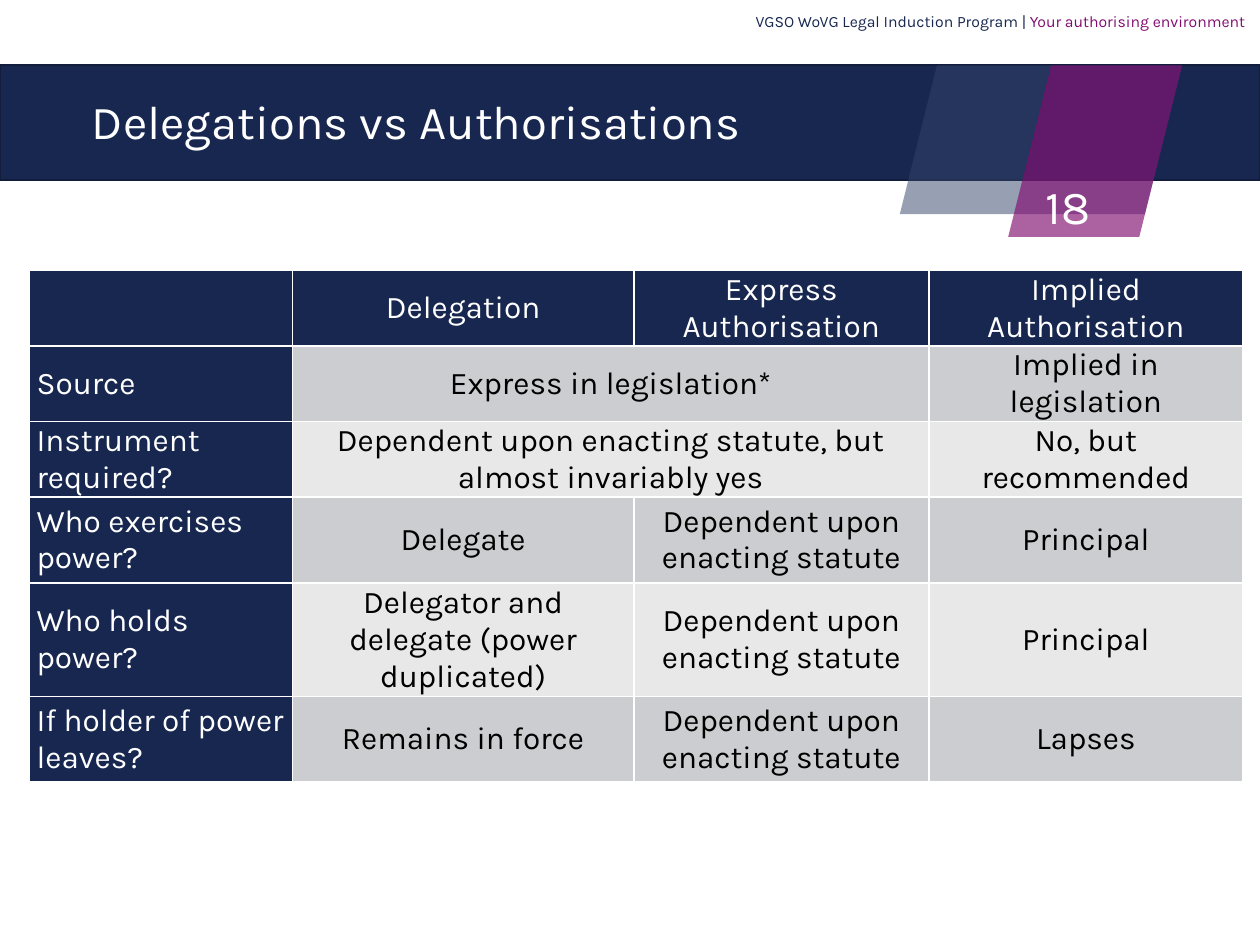
import pptx
import pptx.dml.color
import pptx.enum.shapes
import pptx.enum.text
import pptx.oxml
import pptx.oxml.ns
import pptx.util

Pt = pptx.util.Pt
RGBColor = pptx.dml.color.RGBColor
Align = pptx.enum.text.PP_ALIGN
Anchor = pptx.enum.text.MSO_ANCHOR
Shape = pptx.enum.shapes.MSO_SHAPE

NAVY = RGBColor(0x17, 0x27, 0x50)
DARK_NAVY = RGBColor(0x11, 0x1D, 0x3B)
SLATE = RGBColor(0x34, 0x43, 0x6A)
PURPLE = RGBColor(0x81, 0x0D, 0x70)
WHITE = RGBColor(0xFF, 0xFF, 0xFF)
BLACK = RGBColor(0, 0, 0)
BANDS = (RGBColor(0xCC, 0xCD, 0xD0), RGBColor(0xE8, 0xE8, 0xE9))
FONT = "Karla"

COLUMN_WIDTHS = (150.5, 195.1, 168.6, 179.5)
ROW_HEIGHTS = (32.4, 40.3, 40.3, 49, 49, 49)
# None continues the cell to its left
ROWS = (
    ("", "Delegation", "Express Authorisation", "Implied Authorisation"),
    ("Source", "Express in legislation*", None, "Implied in legislation"),
    ("Instrument required?",
     "Dependent upon enacting statute, but almost invariably yes", None,
     "No, but recommended"),
    ("Who exercises power?", "Delegate", "Dependent upon enacting statute", "Principal"),
    ("Who holds power?", "Delegator and delegate (power duplicated)",
     "Dependent upon enacting statute", "Principal"),
    ("If holder of power leaves?", "Remains in force",
     "Dependent upon enacting statute", "Lapses"),
)


def write_text(paragraph, text, size=18, color=WHITE, align=Align.LEFT,
               line_spacing=None, space_after=None):
    paragraph.alignment = align
    paragraph.line_spacing = line_spacing
    if space_after is not None:
        paragraph.space_after = Pt(space_after)
    run = paragraph.add_run()
    run.text = text
    run.font.name = FONT
    run.font.size = Pt(size)
    run.font.color.rgb = color


def add_text_box(slide, box, insets, anchor):
    """Add an empty wrapping text box and return its first paragraph."""
    frame = slide.shapes.add_textbox(*map(Pt, box)).text_frame
    frame.word_wrap = True
    frame.vertical_anchor = anchor
    frame.margin_left = frame.margin_right = Pt(insets[0])
    frame.margin_top = frame.margin_bottom = Pt(insets[1])
    return frame.paragraphs[0]


def add_filled_shape(slide, kind, box, color, opacity=100, line=None):
    shape = slide.shapes.add_shape(kind, *map(Pt, box))
    shape.shadow.inherit = False
    shape.fill.solid()
    shape.fill.fore_color.rgb = color
    if opacity < 100:
        color_element = shape.fill._xPr.find(".//" + pptx.oxml.ns.qn("a:srgbClr"))
        alpha = pptx.oxml.parse_xml(
            f'<a:alpha {pptx.oxml.ns.nsdecls("a")} val="{opacity * 1000}"/>')
        color_element.append(alpha)
    if line is None:
        shape.line.fill.background()
    else:
        shape.line.color.rgb = line
        shape.line.width = Pt(1)


def add_banner(slide, left, top, width, height):
    add_filled_shape(slide, Shape.RECTANGLE, (left, top, width, height), NAVY,
                     line=DARK_NAVY)
    right = left + 675.5
    for ribbon_width, ribbon_height, color, opacity in (
            (161.3, 85, SLATE, 51), (99.4, 98, PURPLE, 65)):
        add_filled_shape(slide, Shape.PARALLELOGRAM,
                         (right - ribbon_width, top, ribbon_width, ribbon_height),
                         color, opacity)
    title = add_text_box(slide, (left + 45.4, top + 8.6, 461.5, 49.7),
                         (7.2, 3.6), Anchor.MIDDLE)
    write_text(title, "Delegations vs Authorisations", size=27, line_spacing=0.9)
    number = add_text_box(slide, (left + 592.6, top + 57.6, 37.4, 49.7),
                          (5, 3), Anchor.MIDDLE)
    write_text(number, "18", size=27, line_spacing=0.9)


def add_running_header(slide, *box):
    header = add_text_box(slide, box, (5, 3), Anchor.BOTTOM)
    for text, color in (("VGSO WoVG Legal Induction Program | ", NAVY),
                        ("Your authorising environment", PURPLE)):
        write_text(header, text, size=9, color=color, align=Align.RIGHT,
                   line_spacing=0.9)


def set_borders(cell, color, width):
    properties = cell._tc.get_or_add_tcPr()
    for index, side in enumerate(("lnL", "lnR", "lnT", "lnB")):
        properties.insert(index, pptx.oxml.parse_xml(
            f'<a:{side} {pptx.oxml.ns.nsdecls("a")} w="{Pt(width)}"><a:solidFill>'
            f'<a:srgbClr val="{color}"/></a:solidFill></a:{side}>'))


def add_comparison_table(slide, left, top):
    table = slide.shapes.add_table(
        len(ROWS), len(COLUMN_WIDTHS), Pt(left), Pt(top),
        Pt(sum(COLUMN_WIDTHS)), Pt(sum(ROW_HEIGHTS))).table
    for column, width in zip(table.columns, COLUMN_WIDTHS):
        column.width = Pt(width)
    for row, height in zip(table.rows, ROW_HEIGHTS):
        row.height = Pt(height)
    for row_index, texts in enumerate(ROWS):
        for column_index, text in enumerate(texts):
            cell = table.cell(row_index, column_index)
            is_heading = row_index == 0 or column_index == 0
            cell.fill.solid()
            cell.fill.fore_color.rgb = NAVY if is_heading else BANDS[(row_index - 1) % 2]
            set_borders(cell, WHITE, 1)
            cell.vertical_anchor = Anchor.MIDDLE
            cell.margin_left = cell.margin_right = Pt(4.3)
            cell.margin_top = cell.margin_bottom = Pt(0)
            if text is None:
                table.cell(row_index, column_index - 1).merge(cell)
            elif text:
                write_text(cell.text_frame.paragraphs[0], text,
                           color=WHITE if is_heading else BLACK,
                           align=Align.CENTER if column_index else Align.LEFT,
                           space_after=6)


def main():
    presentation = pptx.Presentation()
    presentation.slide_width = Pt(720)
    presentation.slide_height = Pt(540)
    slide = presentation.slides.add_slide(presentation.slide_layouts[6])
    add_banner(slide, 0, 37.3, 720, 65.7)
    add_comparison_table(slide, 16.6, 154.4)
    add_running_header(slide, 387.4, 2.9, 329, 18)
    presentation.save("out.pptx")


if __name__ == "__main__":
    main()
